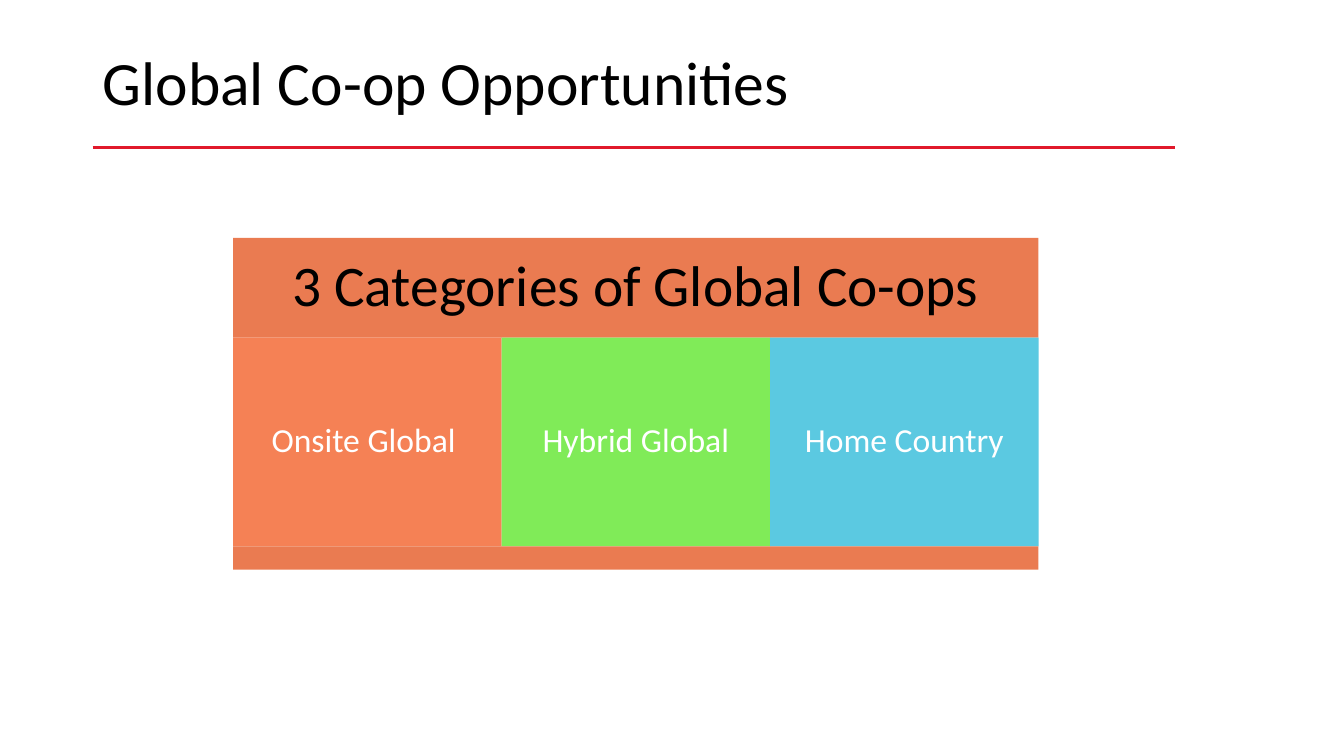
"""Build the slide on the three categories of global co-ops."""
from dataclasses import dataclass

from pptx import Presentation
from pptx.dml.color import RGBColor
from pptx.enum.shapes import MSO_CONNECTOR, MSO_SHAPE
from pptx.enum.text import MSO_ANCHOR, PP_ALIGN
from pptx.oxml.ns import qn
from pptx.util import Inches, Pt


@dataclass(frozen=True)
class Theme:
    font: str = "Calibri"
    ink: str = "000000"
    white: str = "FFFFFF"
    rule: str = "E1192B"
    band: str = "EA7B51"
    onsite: str = "F58155"
    hybrid: str = "80EB58"
    home: str = "5BC9E1"
    title_size: int = 44
    heading_size: int = 41
    label_size: int = 24


class SlideBuilder:
    def __init__(self, deck, theme):
        self.deck = deck
        self.theme = theme
        self.page = deck.slides.add_slide(deck.slide_layouts[6])

    def place(self, left, top, width, height):
        across, down = self.deck.slide_width / 100, self.deck.slide_height / 100
        return [round(length) for length in
                (left * across, top * down, width * across, height * down)]

    def add_text(self, box, text, size, color, align, inset):
        frame = box.text_frame
        frame_format = {"word_wrap": True, "vertical_anchor": MSO_ANCHOR.MIDDLE}
        for side in ("left", "top", "right", "bottom"):
            frame_format[f"margin_{side}"] = Pt(inset)
        for name, value in frame_format.items():
            setattr(frame, name, value)
        para = frame.paragraphs[0]
        for name, value in {"alignment": align, "line_spacing": 0.9}.items():
            setattr(para, name, value)
        span = para.add_run()
        span.text = text
        for name, value in {"name": self.theme.font, "size": Pt(size)}.items():
            setattr(span.font, name, value)
        span.font.color.rgb = RGBColor.from_string(color)

    def title(self, text, *area):
        box = self.page.shapes.add_textbox(*self.place(*area))
        self.add_text(box, text, self.theme.title_size, self.theme.ink, PP_ALIGN.LEFT, 7.2)

    def rule(self, left, right, top):
        start_x, start_y, length, _ = self.place(left, top, right - left, 0)
        line = self.page.shapes.add_connector(
            MSO_CONNECTOR.STRAIGHT, start_x, start_y, start_x + length, start_y)
        line.line.color.rgb = RGBColor.from_string(self.theme.rule)
        line.line.width = Pt(2)
        properties = line._element.spPr
        properties.append(properties.makeelement(qn("a:effectLst"), {}))

    def block(self, fill, *area):
        box = self.page.shapes.add_shape(MSO_SHAPE.RECTANGLE, *self.place(*area))
        box.shadow.inherit = False
        box.fill.solid()
        box.fill.fore_color.rgb = RGBColor.from_string(fill)
        box.line.fill.background()
        return box


def main():
    theme = Theme()
    deck = Presentation()
    deck.slide_width, deck.slide_height = Inches(13.33), Inches(7.5)
    builder = SlideBuilder(deck, theme)

    builder.rule(6.9, 87.4, 19.47)
    builder.title("Global Co-op Opportunities", 6.9, 5.33, 80.87, 12)

    left, width = 17.35, 59.92
    header_top, header_height = 31.47, 13.2
    body_top, body_height = header_top + header_height, 27.6
    header = builder.block(theme.band, left, header_top, width, header_height)
    builder.add_text(header, "3 Categories of Global Co-ops", theme.heading_size,
                     theme.ink, PP_ALIGN.CENTER, 12)

    categories = [("Onsite Global ", theme.onsite),
                  ("Hybrid Global", theme.hybrid),
                  ("Home Country", theme.home)]
    column = width / len(categories)
    for index, (label, fill) in enumerate(categories):
        box = builder.block(fill, left + index * column, body_top, column, body_height)
        builder.add_text(box, label, theme.label_size, theme.white, PP_ALIGN.CENTER, 7)

    builder.block(theme.band, left, body_top + body_height, width, 3.07)
    deck.save("out.pptx")


if __name__ == "__main__":
    main()
